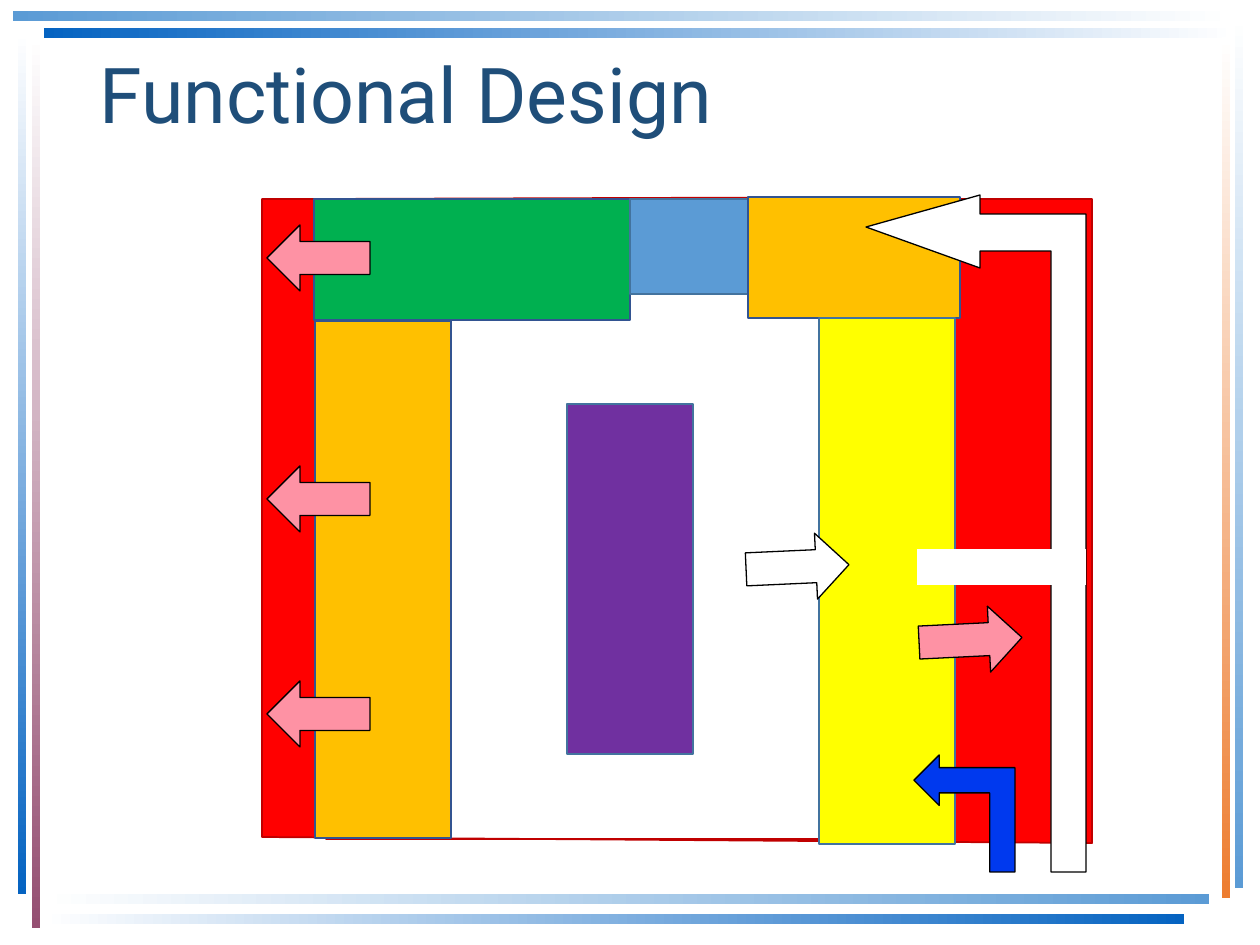
from pptx import Presentation
from pptx.dml.color import RGBColor
from pptx.enum.shapes import MSO_CONNECTOR as CONN, MSO_SHAPE as SHAPE
from pptx.enum.text import MSO_ANCHOR as ANCHOR, PP_ALIGN as ALIGN
from pptx.oxml.ns import qn
from pptx.util import Pt
from lxml.etree import SubElement

SCALE = 914400 / 126


def px(*values):
    return [round(v * SCALE) for v in values]


def rgb(code):
    return RGBColor.from_string(code)


def write(tf, text, font="Roboto", size=18, color="000000", align=ALIGN.LEFT,
          anchor=ANCHOR.MIDDLE, spacing=0.9):
    tf.word_wrap = True
    tf.vertical_anchor = anchor
    p = tf.paragraphs[0]
    p.alignment = align
    p.line_spacing = spacing
    r = p.add_run()
    r.text = text
    r.font.name = font
    r.font.size = Pt(size)
    r.font.color.rgb = rgb(color)


class Deck:
    ink = "000000"
    thin = 0.75
    title_color = "1F4E79"

    def __init__(self, prs):
        self.s = prs.slides.add_slide(prs.slide_layouts[5])

    def title(self, box, text):
        sp = self.s.shapes.title
        sp.left, sp.top, sp.width, sp.height = px(*box)
        write(sp.text_frame, text, size=44, color=self.title_color)

    def paint(self, sp, fill, line, width):
        sp.shadow.inherit = False
        sp.fill.solid()
        sp.fill.fore_color.rgb = rgb(fill)
        sp.line.color.rgb = rgb(line)
        sp.line.width = Pt(width)

    def bar(self, box, start, end, angle):
        sp = self.s.shapes.add_shape(SHAPE.RECTANGLE, *px(*box))
        sp.shadow.inherit = False
        sp.line.fill.background()
        sp.fill.gradient()
        sp.fill.gradient_angle = angle
        for stop, color in zip(sp.fill.gradient_stops, (start, end)):
            stop.color.rgb = rgb(color)

    def room(self, box, fill, line):
        sp = self.s.shapes.add_shape(SHAPE.RECTANGLE, *px(*box))
        self.paint(sp, fill, line, 1)

    def arrow(self, kind, box, fill, rotation=0):
        sp = self.s.shapes.add_shape(kind, *px(*box))
        sp.rotation = rotation
        self.paint(sp, fill, self.ink, self.thin)

    def outline(self, contours, fill, line, width):
        first, *rest = contours
        fb = self.s.shapes.build_freeform(*first[0], scale=SCALE)
        fb.add_line_segments(first[1:], close=True)
        for points in rest:
            fb.move_to(*points[0])
            fb.add_line_segments(points[1:], close=True)
        self.paint(fb.convert_to_shape(), fill, line, width)

    def line(self, x1, y1, x2, y2, color, width):
        c = self.s.shapes.add_connector(CONN.STRAIGHT, *px(x1, y1, x2, y2))
        c.line.color.rgb = rgb(color)
        c.line.width = Pt(width)
        SubElement(c._element.spPr, qn("a:effectLst"))


def main():
    prs = Presentation()
    prs.slide_width, prs.slide_height = px(1260, 945)
    deck = Deck(prs)

    white, sky, blue = "FFFFFF", "5B9BD5", "0563C1"
    for box, start, end, angle in [
        ((43, 894, 1166, 10), white, sky, 0),
        ((43, 914, 1141, 10), white, blue, 0),
        ((44, 28, 1192, 10), blue, white, 0),
        ((13, 11, 1222, 10), sky, white, 0),
        ((1235, 15, 8, 873), white, sky, 270),
        ((1222, 37, 8, 861), white, "ED7D31", 270),
        ((32, 35, 8, 893), white, "954F72", 270),
        ((18, 32, 8, 862), white, blue, 270),
    ]:
        deck.bar(box, start, end, angle)
    deck.title((87, 43, 1086, 111), "Functional Design")

    outer = [(262, 199), (1092, 199), (1092, 843), (262, 837)]
    inner = [(323, 199), (326, 839), (949, 839), (949, 197)]
    deck.outline([outer, inner], "FF0000", "C00000", 1)

    navy, steel, amber = "325491", "43739E", "FFC000"
    for box, fill, line in [
        ((314, 199, 316, 121), "00B050", navy),
        ((630, 199, 122, 95), sky, steel),
        ((748, 197, 212, 121), amber, navy),
        ((315, 321, 136, 517), amber, navy),
        ((819, 318, 136, 526), "FFFF00", steel),
        ((567, 404, 126, 350), "7030A0", steel),
    ]:
        deck.room(box, fill, line)

    supply = [(1051, 872), (1051, 251), (980, 251), (980, 268), (866, 227),
              (980, 195), (980, 214), (1086, 214), (1086, 872)]
    deck.outline([supply], white, deck.ink, deck.thin)
    deck.arrow(SHAPE.BENT_UP_ARROW, (906, 763, 117, 101), "0039EE", 270)

    pink = "FE92A4"
    for x, y, fill, rotation in [
        (267, 225, pink, 0), (267, 681, pink, 0), (267, 466, pink, 0),
        (919, 607, pink, 177.2),
    ]:
        deck.arrow(SHAPE.LEFT_ARROW, (x, y, 103, 66), fill, rotation)
    deck.line(917, 567, 1086, 567, white, 20)
    deck.arrow(SHAPE.LEFT_ARROW, (746, 534, 103, 66), white, 177.4)

    prs.save("out.pptx")


if __name__ == "__main__":
    main()
